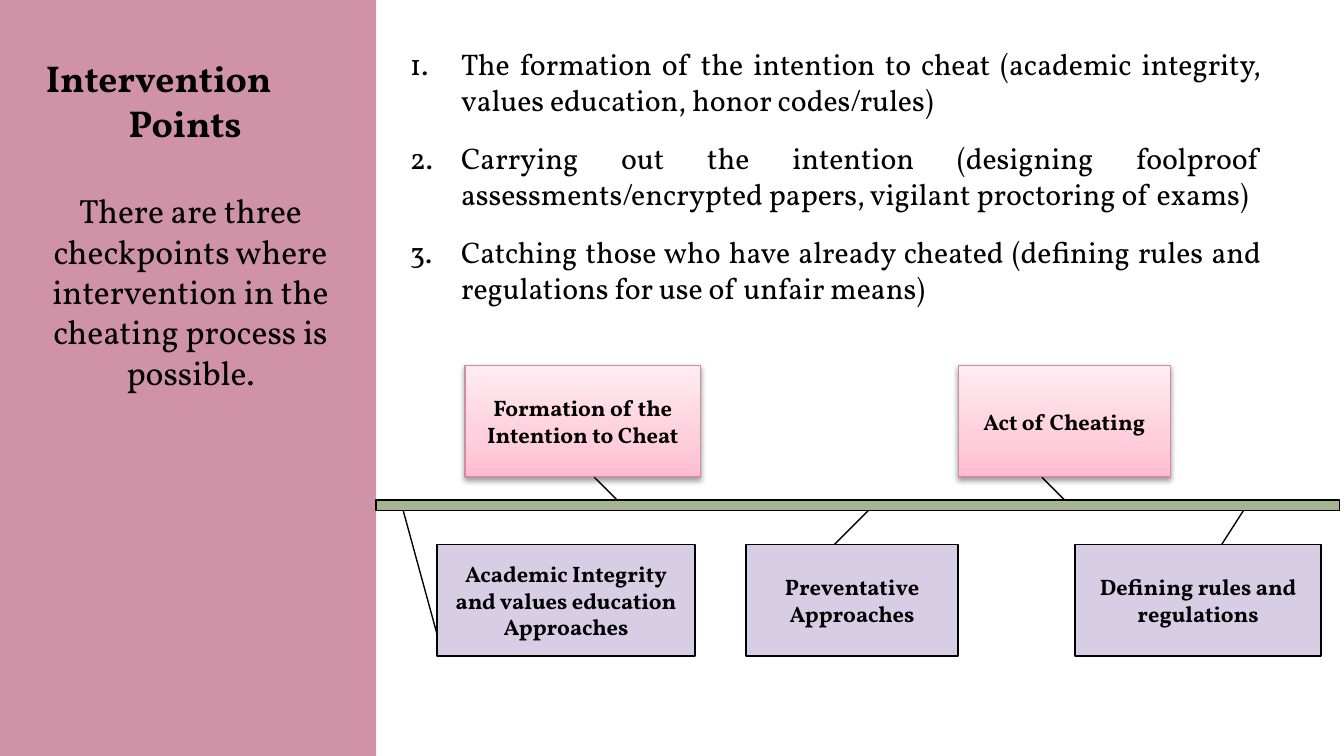
from copy import deepcopy

from lxml.etree import SubElement
from pptx import Presentation
from pptx.dml.color import RGBColor
from pptx.enum.shapes import MSO_CONNECTOR as Connector, MSO_SHAPE as Preset
from pptx.enum.text import MSO_ANCHOR as Anchor, MSO_AUTO_SIZE as AutoSize, PP_ALIGN as Align
from pptx.oxml.ns import qn
from pptx.util import Cm, Pt

FONT = "Vollkorn"
BLACK = "000000"
PINK_STOPS = [(0, "FFBCD0"), (0.35, "FFCFDD"), (1, "FFECF2")]
BAR_TOP, BAR_BOTTOM = 9.45, 9.65
STAGE_TOP, APPROACH_TOP, BOX_HEIGHT = 6.91, 10.29, 2.11
STAGE_BOTTOM = STAGE_TOP + BOX_HEIGHT

POINTS = [
    "The formation of the intention to cheat (academic integrity, values education, honor codes/rules)",
    "Carrying out the intention (designing foolproof assessments/encrypted papers, vigilant proctoring of exams)",
    "Catching those who have already cheated (defining rules and regulations for use of unfair means)",
]
STAGES = [
    (8.79, 4.45, ["Formation of the", "Intention to Cheat"]),
    (18.11, 4.01, ["Act of Cheating"]),
]
APPROACHES = [
    (8.26, 4.88, ["Academic Integrity", "and values education", "Approaches"]),
    (14.1, 4.01, ["Preventative", "Approaches"]),
    (20.32, 4.65, ["Defining rules and", "regulations"]),
]
LINKS = [
    (8.26, 11.99, 7.62, BAR_BOTTOM),
    (11.23, STAGE_BOTTOM, 11.66, BAR_TOP),
    (15.77, APPROACH_TOP, 16.41, BAR_BOTTOM),
    (19.69, STAGE_BOTTOM, 20.12, BAR_TOP),
    (23.09, APPROACH_TOP, 23.5, BAR_BOTTOM),
]


def color(value):
    """Turn a hex string into a colour."""
    return RGBColor.from_string(value)


def write(box, lines, size, bold=False, align=Align.CENTER, gap=0, anchor=Anchor.TOP, wrap=True):
    """Write one formatted paragraph per line and return the paragraphs."""
    frame = box.text_frame
    frame.auto_size = AutoSize.NONE
    frame.word_wrap = wrap
    frame.vertical_anchor = anchor
    frame.text = "\n".join(lines)
    for para in frame.paragraphs:
        para.alignment = align
        para.space_before = para.space_after = Pt(gap)
        for span in para.runs:
            font = span.font
            font.name, font.size, font.bold = FONT, Pt(size), bold
            font.color.rgb = color(BLACK)
    return frame.paragraphs


def place(box, left, top, width, height):
    """Move and size a placeholder."""
    box.left, box.top, box.width, box.height = Cm(left), Cm(top), Cm(width), Cm(height)
    return box


def set_bullet(para, numbered):
    """Number a paragraph with a hanging indent, or clear its bullet."""
    props = para._p.get_or_add_pPr()
    indent = Cm(0.97) if numbered else 0
    props.set("marL", str(indent))
    props.set("indent", str(-indent))
    if numbered:
        SubElement(props, qn("a:buFont"), typeface=FONT)
        SubElement(props, qn("a:buAutoNum"), type="arabicPeriod")
    else:
        SubElement(props, qn("a:buNone"))


def add_rect(page, left, top, width, height, fill, line=None):
    """Add a flat rectangle."""
    box = page.shapes.add_shape(Preset.RECTANGLE, Cm(left), Cm(top), Cm(width), Cm(height))
    box.shadow.inherit = False
    box.fill.solid()
    box.fill.fore_color.rgb = color(fill)
    if line:
        box.line.color.rgb = color(line)
        box.line.width = Pt(0.75)
    else:
        box.line.fill.background()
    return box


def add_label(page, left, top, width, lines, fill, line):
    """Add a rectangle with a bold centred label."""
    box = add_rect(page, left, top, width, BOX_HEIGHT, fill, line)
    write(box, lines, 12, bold=True, anchor=Anchor.MIDDLE, wrap=False)
    return box


def shade(box, stops):
    """Fill a box with an upward gradient."""
    box.fill.gradient()
    box.fill.gradient_angle = 90
    stop_list = box._element.spPr.find(".//" + qn("a:gsLst"))
    while len(stop_list) < len(stops):
        stop_list.append(deepcopy(stop_list[-1]))
    for stop, (position, value) in zip(box.fill.gradient_stops, stops):
        stop.position = position
        stop.color.rgb = color(value)


def drop_shadow(box):
    """Give a box a soft shadow below."""
    effects = box._element.spPr.find(qn("a:effectLst"))
    shadow = SubElement(effects, qn("a:outerShdw"), blurRad=str(Pt(3.1)), dist=str(Pt(1.6)),
                        dir="5400000", rotWithShape="0")
    tint = SubElement(shadow, qn("a:srgbClr"), val=BLACK)
    SubElement(tint, qn("a:alpha"), val="38000")


def add_link(page, *ends):
    """Add a thin black line between two points."""
    link = page.shapes.add_connector(Connector.STRAIGHT, *map(Cm, ends))
    link.line.color.rgb = color(BLACK)
    link.line.width = Pt(0.75)
    SubElement(link._element.spPr, qn("a:effectLst"))


def fill_placeholders(page):
    """Write the title, the statement and the numbered points."""
    title, statement, points = page.placeholders
    place(title, 0.3, 0.91, 6.6, 1.96)
    heading = write(title, ["Intervention", "Points"], 20, bold=True)
    for para, margin in zip(heading, (1.2, 0.2)):
        para._p.get_or_add_pPr().set("marR", str(Cm(margin)))

    place(statement, 0.3, 3.47, 6.6, 4.1)
    text = "There are three checkpoints where intervention in the cheating process is possible."
    for para in write(statement, [text], 18):
        set_bullet(para, numbered=False)

    place(points, 7.49, 0.74, 16.61, 6.1)
    for para in write(points, POINTS, 16, align=Align.JUSTIFY, gap=6):
        set_bullet(para, numbered=True)


def add_timeline(page):
    """Draw the bar with its stages, approaches and links."""
    add_rect(page, 7.11, BAR_TOP, 18.21, BAR_BOTTOM - BAR_TOP, "A5B592", BLACK)
    for left, width, lines in STAGES:
        box = add_label(page, left, STAGE_TOP, width, lines, "FFCFDD", "CD8DA3")
        shade(box, PINK_STOPS)
        drop_shadow(box)
    for left, width, lines in APPROACHES:
        add_label(page, left, APPROACH_TOP, width, lines, "D7CEE6", BLACK)
    for ends in LINKS:
        add_link(page, *ends)


def main():
    """Build the slide and save the deck."""
    deck = Presentation()
    deck.slide_width, deck.slide_height = Cm(25.4), Cm(14.29)
    page = deck.slides.add_slide(deck.slide_layouts.get_by_name("Two Content"))
    panel = add_rect(page, 0, 0, 7.11, 14.29, "D092A7")
    page.shapes._spTree.insert(2, panel._element)
    fill_placeholders(page)
    add_timeline(page)
    deck.save("out.pptx")


if __name__ == "__main__":
    main()
